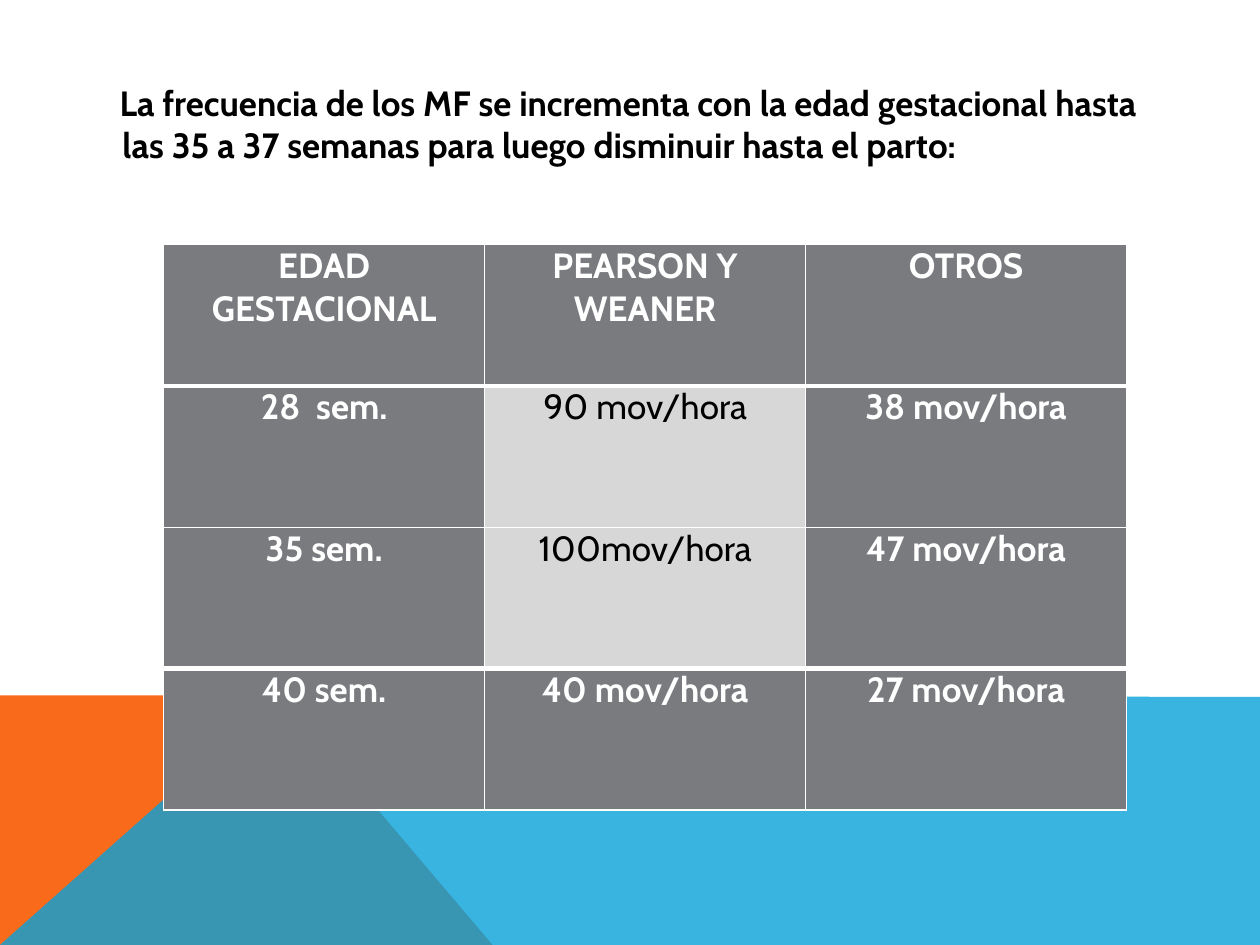
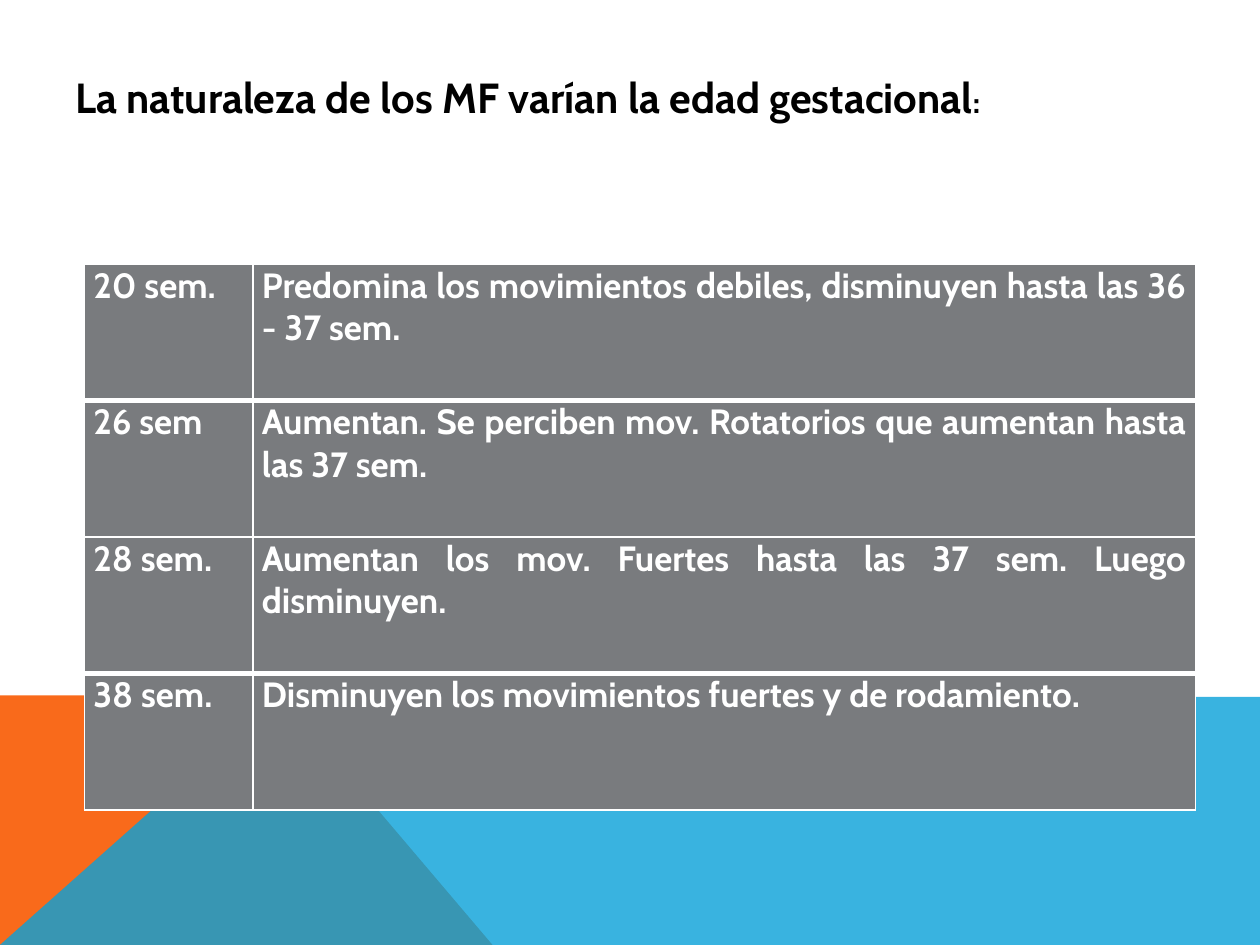
from dataclasses import dataclass

from lxml.etree import SubElement
from pptx import Presentation
from pptx.dml.color import RGBColor
from pptx.enum.text import MSO_ANCHOR, PP_ALIGN
from pptx.oxml import parse_xml
from pptx.oxml.ns import nsdecls, qn
from pptx.util import Cm, Pt

SLIDES = [
    {
        "title": [("La frecuencia de los MF se incrementa con la edad gestacional hasta "
                   "las 35 a 37 semanas para luego disminuir hasta el parto:", 20)],
        "title_box": (1.27, 1.52, 22.86, 16),
        "first_line_indent": -0.06,
        "table_corner": (3.3, 4.93),
        "columns": (6.47, 6.47, 6.47),
        "row_height": 2.85,
        "alignment": PP_ALIGN.CENTER,
        "rows": [
            ("EDAD GESTACIONAL", "PEARSON Y WEANER", "OTROS"),
            ("28  sem.", "90 mov/hora", "38 mov/hora"),
            ("35 sem.", "100mov/hora", "47 mov/hora"),
            ("40 sem.", "40 mov/hora", "27 mov/hora"),
        ],
        "light_cells": {(1, 1), (2, 1)},
    },
    {
        "title": [("La naturaleza de los MF varían la edad gestacional", 24), (":", 18)],
        "title_box": (1.27, 1.32, 22.86, 15.7),
        "first_line_indent": -0.95,
        "table_corner": (1.7, 5.33),
        "columns": (3.4, 19),
        "row_height": 2.75,
        "alignment": PP_ALIGN.JUSTIFY,
        "rows": [
            ("20 sem.", "Predomina los movimientos debiles, disminuyen hasta las 36 - 37 sem."),
            ("26 sem", "Aumentan. Se perciben mov. Rotatorios que aumentan hasta las 37 sem."),
            ("28 sem.", "Aumentan los mov. Fuertes hasta las 37 sem. Luego disminuyen."),
            ("38 sem.", "Disminuyen los movimientos fuertes y de rodamiento."),
        ],
        "light_cells": set(),
    },
]


@dataclass(frozen=True)
class Theme:
    font: str = "Cabin"
    table_size: int = 20
    ink: str = "000000"
    white: str = "FFFFFF"
    dark_cell: str = "797B7E"
    light_cell: str = "D7D7D8"
    orange: str = "F96A1B"
    blue: str = "08A1D9"
    thin_rule: int = 1
    thick_rule: int = 3


THEME = Theme()
WIDTH, HEIGHT = 25.4, 19.05
BAND_TOP = 14.02
BANDS = [
    (THEME.orange, 100, [(0, HEIGHT), (0, BAND_TOP), (5.66, BAND_TOP), (9.93, HEIGHT)]),
    (THEME.blue, 80, [(0, HEIGHT), (5.66, BAND_TOP), (WIDTH, 14.05), (WIDTH, HEIGHT)]),
]


def color(value):
    return RGBColor.from_string(value)


def add_bands(slide):
    for fill, opacity, corners in BANDS:
        points = [(Cm(x), Cm(y)) for x, y in corners]
        builder = slide.shapes.build_freeform(*points[0])
        builder.add_line_segments(points[1:], close=True)
        shape = builder.convert_to_shape()
        shape.shadow.inherit = False
        shape.line.fill.background()
        shape.fill.solid()
        shape.fill.fore_color.rgb = color(fill)
        if opacity < 100:
            color_element = shape.fill._xPr.find(".//" + qn("a:srgbClr"))
            SubElement(color_element, qn("a:alpha"), val=str(opacity * 1000))


def add_title(slide, content):
    box = slide.shapes.add_textbox(*map(Cm, content["title_box"]))
    frame = box.text_frame
    frame.word_wrap = True
    frame.vertical_anchor = MSO_ANCHOR.TOP
    frame.margin_right = Cm(0.6)
    paragraph = frame.paragraphs[0]
    properties = paragraph._p.get_or_add_pPr()
    properties.set("marL", str(Cm(0.95)))
    properties.set("indent", str(Cm(content["first_line_indent"])))
    paragraph.font.name = THEME.font
    paragraph.font.bold = True
    paragraph.font.color.rgb = color(THEME.ink)
    for text, size in content["title"]:
        run = paragraph.add_run()
        run.text = text
        run.font.size = Pt(size)


def set_borders(cell, top, bottom):
    properties = cell._tc.get_or_add_tcPr()
    sides = [("L", THEME.thin_rule), ("R", THEME.thin_rule), ("T", top), ("B", bottom)]
    for position, (side, width) in enumerate(sides):
        properties.insert(position, parse_xml(
            f'<a:ln{side} {nsdecls("a")} w="{Pt(width)}"><a:solidFill>'
            f'<a:srgbClr val="{THEME.white}"/></a:solidFill></a:ln{side}>'))


def fill_cell(cell, text, alignment, light):
    cell.margin_left = cell.margin_right = Cm(0.18)
    cell.margin_top = cell.margin_bottom = 0
    cell.fill.solid()
    cell.fill.fore_color.rgb = color(THEME.light_cell if light else THEME.dark_cell)
    cell.text = text
    paragraph = cell.text_frame.paragraphs[0]
    paragraph.alignment = alignment
    paragraph.font.name = THEME.font
    paragraph.font.size = Pt(THEME.table_size)
    paragraph.font.bold = not light
    paragraph.font.color.rgb = color(THEME.ink if light else THEME.white)


def add_week_table(slide, content):
    rows, columns = content["rows"], content["columns"]
    left, top = content["table_corner"]
    height = content["row_height"] * len(rows)
    table = slide.shapes.add_table(len(rows), len(columns), Cm(left), Cm(top),
                                   Cm(sum(columns)), Cm(height)).table
    table.first_row = table.horz_banding = False
    for column, width in zip(table.columns, columns):
        column.width = Cm(width)
    rules = [THEME.thin_rule] * (len(rows) + 1)
    rules[1] = rules[-2] = THEME.thick_rule
    for row_index, texts in enumerate(rows):
        table.rows[row_index].height = Cm(content["row_height"])
        for column_index, text in enumerate(texts):
            cell = table.cell(row_index, column_index)
            light = (row_index, column_index) in content["light_cells"]
            fill_cell(cell, text, content["alignment"], light)
            set_borders(cell, rules[row_index], rules[row_index + 1])


def main():
    presentation = Presentation()
    presentation.slide_width, presentation.slide_height = Cm(WIDTH), Cm(HEIGHT)
    for content in SLIDES:
        slide = presentation.slides.add_slide(presentation.slide_layouts[6])
        add_bands(slide)
        add_title(slide, content)
        add_week_table(slide, content)
    presentation.save("out.pptx")


if __name__ == "__main__":
    main()
